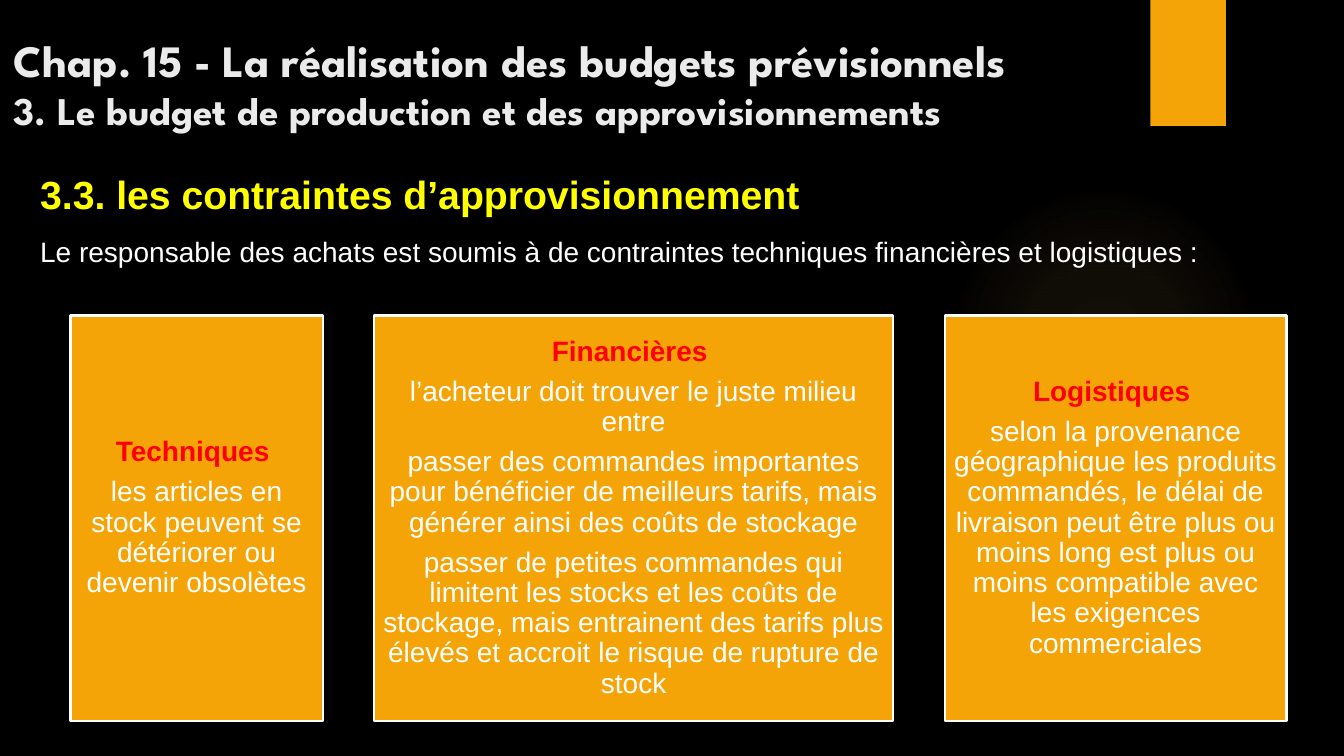
from lxml import etree
from pptx import Presentation
from pptx.dml.color import RGBColor
from pptx.enum.shapes import MSO_SHAPE as SHAPE
from pptx.enum.text import MSO_ANCHOR as ANCHOR, PP_ALIGN as ALIGN
from pptx.oxml.ns import qn
from pptx.util import Inches, Pt

AMBER, WHITE, RED, YELLOW, PALE = "F5A408", "FFFFFF", "FF0000", "FFFF00", "EBEBEB"


def color(value):
    return RGBColor.from_string(value)


def add_text(tf, text, size=20, font="Arial", fill=WHITE, bold=False,
             align=ALIGN.LEFT, before=0, after=0, spacing=1.0):
    p = tf.paragraphs[0]
    if p.runs:
        p = tf.add_paragraph()
    p.alignment = align
    p.space_before, p.space_after = Pt(before), Pt(after)
    p.line_spacing = spacing
    r = p.add_run()
    r.text = text
    r.font.size, r.font.name, r.font.bold = Pt(size), font, bold
    r.font.color.rgb = color(fill)


prs = Presentation()
prs.slide_width, prs.slide_height = Inches(13.33), Inches(7.5)
s = prs.slides.add_slide(prs.slide_layouts[6])
s.background.fill.solid()
s.background.fill.fore_color.rgb = color("000000")

glow = s.shapes.add_shape(SHAPE.OVAL, Inches(9.41), Inches(1.83), Inches(3.08), Inches(3.08))
glow.shadow.inherit = False
glow.line.fill.background()
glow.fill.gradient()
grad = glow.fill._fill._gradFill
for child in list(grad):
    grad.remove(child)
stops = etree.SubElement(grad, qn("a:gsLst"))
for position, alpha in [(0, 7), (36, 6), (69, 0)]:
    stop = etree.SubElement(stops, qn("a:gs"), pos=str(position * 1000))
    tint = etree.SubElement(stop, qn("a:srgbClr"), val="FAC96A")
    etree.SubElement(tint, qn("a:alpha"), val=str(alpha * 1000))
radial = etree.SubElement(grad, qn("a:path"), path="circle")
etree.SubElement(radial, qn("a:fillToRect"), l="50000", t="50000", r="50000", b="50000")

tab = s.shapes.add_shape(SHAPE.RECTANGLE, Inches(11.41), 0, Inches(0.75), Inches(1.25))
tab.shadow.inherit = False
tab.fill.solid()
tab.fill.fore_color.rgb = color(AMBER)
tab.line.fill.background()

title = s.shapes.add_textbox(Inches(0.04), Inches(0.04), Inches(12.54), Inches(1.33))
tf = title.text_frame
tf.word_wrap = True
tf.vertical_anchor = ANCHOR.BOTTOM
for text, size in [("Chap. 15 - La réalisation des budgets prévisionnels", 32),
                   ("3. Le budget de production et des approvisionnements", 28)]:
    add_text(tf, text, size=size, font="League Spartan", fill=PALE, bold=True)

intro = s.shapes.add_textbox(Inches(0.3), Inches(1.64), Inches(12.54), Inches(1.08))
tf = intro.text_frame
tf.word_wrap = True
add_text(tf, "3.3. les contraintes d’approvisionnement", size=28, fill=YELLOW, bold=True,
         align=ALIGN.JUSTIFY, after=6)
add_text(tf, "Le responsable des achats est soumis à de contraintes techniques "
         "financières et logistiques :", align=ALIGN.JUSTIFY, before=6)

constraints = [
    (2.5, "Techniques ", ["les articles en stock peuvent se détériorer ou devenir obsolètes"]),
    (5.15, "Financières ", [
        "l’acheteur doit trouver le juste milieu entre",
        "passer des commandes importantes pour bénéficier de meilleurs tarifs, "
        "mais générer ainsi des coûts de stockage",
        "passer de petites commandes qui limitent les stocks et les coûts de stockage, "
        "mais entrainent des tarifs plus élevés et accroit le risque de rupture de stock"]),
    (3.39, "Logistiques ", [
        "selon la provenance géographique les produits commandés, le délai de livraison "
        "peut être plus ou moins long est plus ou moins compatible avec les exigences "
        "commerciales"]),
]
left, gap = 0.7, 0.51
for width, heading, details in constraints:
    sp = s.shapes.add_shape(SHAPE.RECTANGLE, Inches(left), Inches(3.13), Inches(width), Inches(4.02))
    sp.shadow.inherit = False
    sp.fill.solid()
    sp.fill.fore_color.rgb = color(AMBER)
    sp.line.color.rgb = color(WHITE)
    sp.line.width = Pt(1.5)
    tf = sp.text_frame
    tf.word_wrap = True
    tf.vertical_anchor = ANCHOR.MIDDLE
    tf.margin_left = tf.margin_right = tf.margin_top = tf.margin_bottom = Inches(0.08)
    add_text(tf, heading, fill=RED, bold=True, align=ALIGN.CENTER, after=7, spacing=0.9)
    for detail in details:
        add_text(tf, detail, align=ALIGN.CENTER, after=7, spacing=0.9)
    left += width + gap

prs.save("out.pptx")
